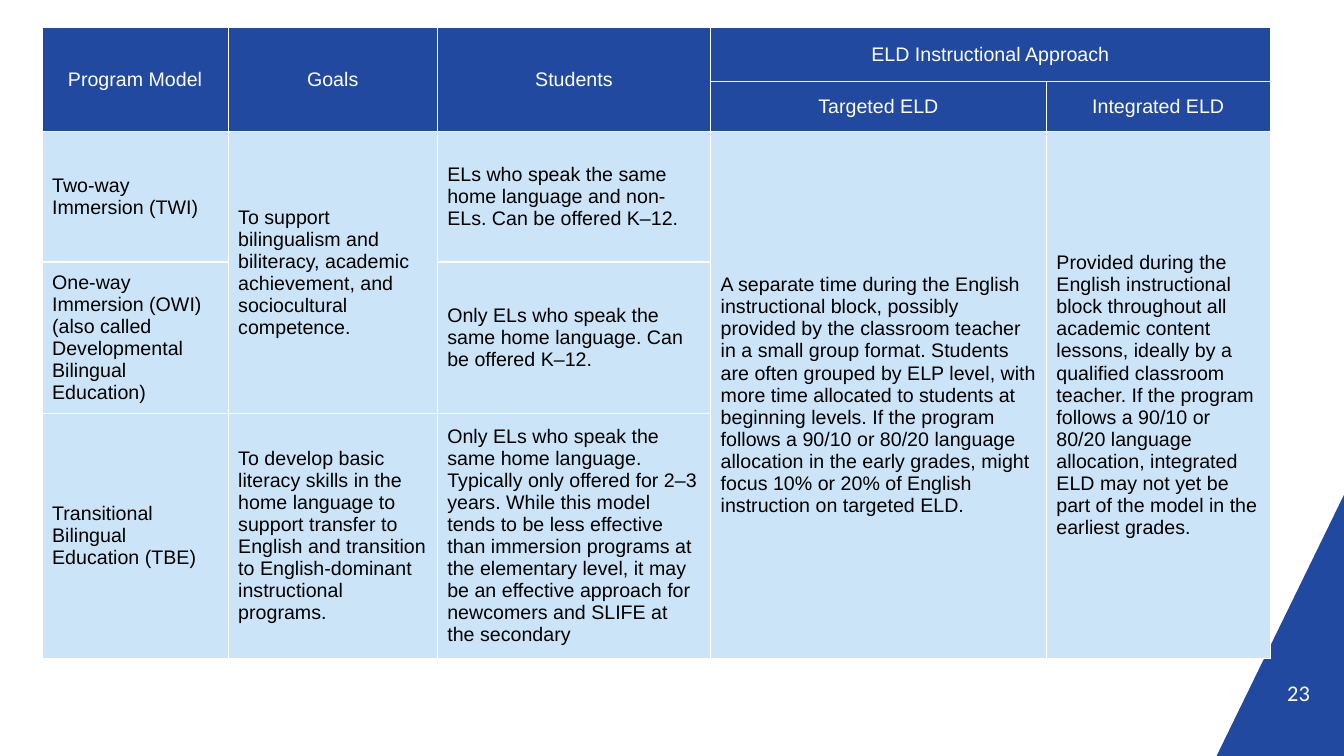
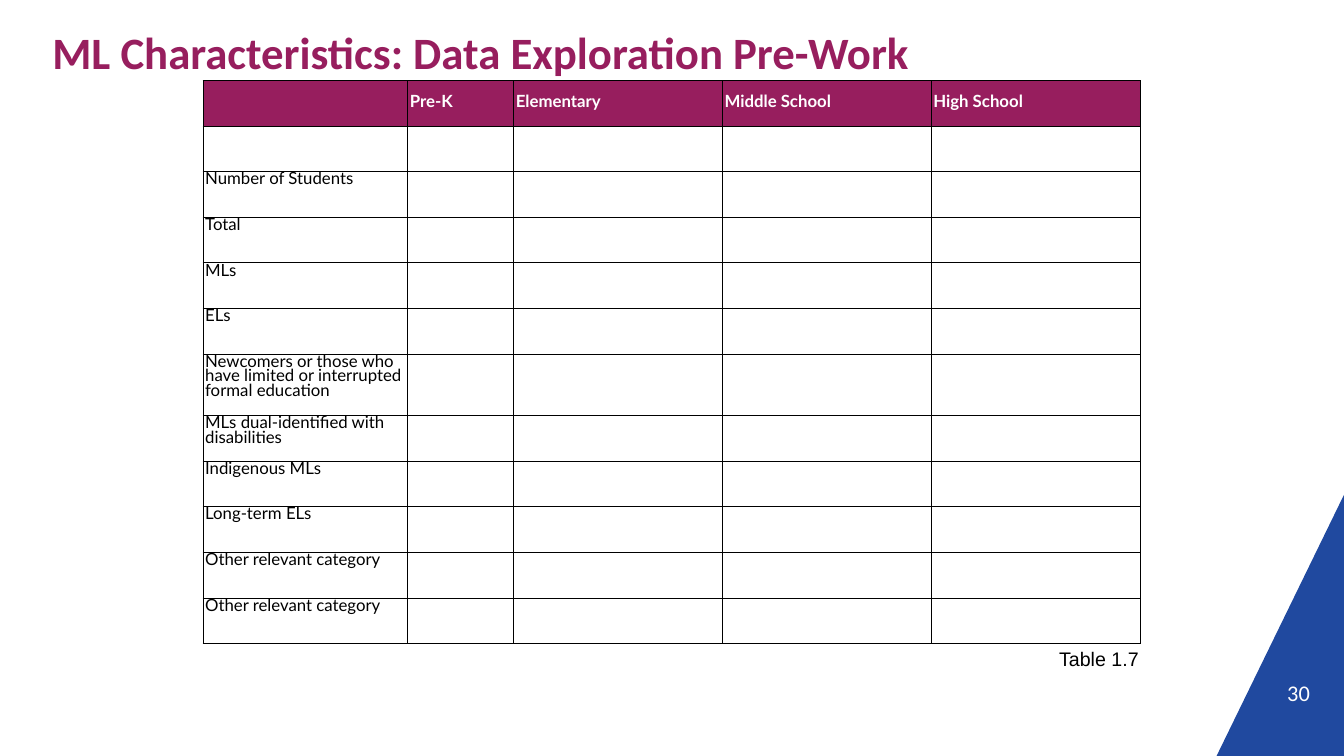
from lxml.etree import SubElement
from pptx import Presentation
from pptx.dml.color import RGBColor
from pptx.enum.text import MSO_ANCHOR as Anchor, PP_ALIGN as Align
from pptx.oxml.ns import qn
from pptx.util import Cm, Pt

BLUE = "20499F"
PALE_BLUE = "CCE4F7"
PLUM = "971E5E"
WHITE = "FFFFFF"
BLACK = "000000"


def rgb(value):
    return RGBColor.from_string(value)


def write(box, text, font="Arial", size=14, color=BLACK, bold=False, align=None,
          anchor=Anchor.TOP, margin=None, line=None, after=None):
    frame = getattr(box, "text_frame", box)
    box.vertical_anchor = anchor
    if margin is not None:
        box.margin_left = box.margin_right = Cm(margin)
        box.margin_top = box.margin_bottom = Cm(margin)
    frame.word_wrap = True
    frame.text = text
    for paragraph in frame.paragraphs:
        paragraph.alignment = align
        if line:
            paragraph.line_spacing = Pt(line)
        if after:
            paragraph.space_after = Pt(after)
        paragraph.font.name = font
        paragraph.font.size = Pt(size)
        paragraph.font.bold = bold
        paragraph.font.color.rgb = rgb(color)


deck = Presentation()
deck.slide_width = Cm(33.87)
deck.slide_height = Cm(19.05)
blank = deck.slide_layouts[6]
models_slide = deck.slides.add_slide(blank)
data_slide = deck.slides.add_slide(blank)

for slide, number in ((models_slide, "23"), (data_slide, "30")):
    outline = slide.shapes.build_freeform(Cm(33.87), Cm(12.47))
    outline.add_line_segments([(Cm(30.66), Cm(19.05)), (Cm(33.87), Cm(19.05))])
    corner = outline.convert_to_shape()
    corner.shadow.inherit = False
    corner.fill.solid()
    corner.fill.fore_color.rgb = rgb(BLUE)
    corner.line.fill.background()
    page = slide.shapes.add_textbox(Cm(30.5), Cm(17.02), Cm(2.51), Cm(0.76))
    write(page.text_frame, number, font="Calibri", size=16, color=WHITE,
          align=Align.RIGHT, anchor=Anchor.BOTTOM, margin=0)

model_rows = [
    ["Program Model", "Goals", "Students", "ELD Instructional Approach", None],
    [None, None, None, "Targeted ELD", "Integrated ELD"],
    [
        "Two-way Immersion (TWI)",
        "To support bilingualism and biliteracy, academic achievement, and "
        "sociocultural competence.",
        "ELs who speak the same home language and non-ELs. Can be offered K–12.",
        "A separate time during the English instructional block, possibly provided "
        "by the classroom teacher in a small group format. Students are often "
        "grouped by ELP level, with more time allocated to students at beginning "
        "levels. If the program follows a 90/10 or 80/20 language allocation in the "
        "early grades, might focus 10% or 20% of English instruction on targeted ELD.",
        "Provided during the English instructional block throughout all academic "
        "content lessons, ideally by a qualified classroom teacher. If the program "
        "follows a 90/10 or 80/20 language allocation, integrated ELD may not yet be "
        "part of the model in the earliest grades.",
    ],
    [
        "One-way Immersion (OWI)\n"
        "(also called Developmental Bilingual Education)",
        None,
        "Only ELs who speak the same home language. Can be offered K–12.",
        None,
        None,
    ],
    [
        "Transitional Bilingual Education (TBE)",
        "To develop basic literacy skills in the home language to support transfer "
        "to English and transition to English-dominant instructional programs.",
        "Only ELs who speak the same home language. Typically only offered for 2–3 "
        "years. While this model tends to be less effective than immersion programs "
        "at the elementary level, it may be an effective approach for newcomers and "
        "SLIFE at the secondary",
        None,
        None,
    ],
]
model_widths = [4.69, 5.27, 6.89, 8.46, 5.64]
model_heights = [1.36, 1.27, 3.28, 3.58, 5.82]
model_merges = [((0, 0), (1, 0)), ((0, 1), (1, 1)), ((0, 2), (1, 2)),
                ((0, 3), (0, 4)), ((2, 1), (3, 1)), ((2, 3), (4, 3)),
                ((2, 4), (4, 4))]

title = data_slide.shapes.add_textbox(Cm(1.32), Cm(0.61), Cm(30.43), Cm(1.37))
write(title.text_frame, "ML Characteristics: Data Exploration Pre-Work",
      font="Calibri", size=32, color=PLUM, bold=True, anchor=Anchor.MIDDLE, margin=0)

levels = [None, "Pre-K", "Elementary", "Middle School", "High School"]
categories = [
    None, "Number of Students", "Total", "MLs", "ELs",
    "Newcomers or those who have limited or interrupted formal education",
    "MLs dual-identified with disabilities", "Indigenous MLs", "Long-term ELs",
    "Other relevant category", "Other relevant category",
]
data_rows = [levels] + [[category] + [None] * 4 for category in categories]
data_widths = [5.16, 2.67, 5.26, 5.26, 5.26]
data_heights = [1.15] * 6 + [1.55] + [1.15] * 5

model_style = dict(anchor=Anchor.MIDDLE)
data_style = dict(font="Lato", size=12, margin=0.05, line=10.5, after=10.1)
tables = [
    (models_slide, 1.06, 0.69, model_rows, model_widths, model_heights, model_merges,
     2, BLUE, PALE_BLUE, WHITE, 1, model_style,
     dict(color=WHITE, align=Align.CENTER)),
    (data_slide, 5.12, 2.03, data_rows, data_widths, data_heights, [],
     1, PLUM, None, BLACK, 0.75, data_style,
     dict(color=WHITE, bold=True, anchor=Anchor.MIDDLE)),
]

for (slide, left, top, rows, widths, heights, merges, header_rows, header_fill,
     body_fill, border, border_width, style, header_style) in tables:
    table = slide.shapes.add_table(len(rows), len(widths), Cm(left), Cm(top),
                                   Cm(sum(widths)), Cm(sum(heights))).table
    table.horz_banding = False
    for column, width in zip(table.columns, widths):
        column.width = Cm(width)
    for row, height in zip(table.rows, heights):
        row.height = Cm(height)
    for first, last in merges:
        table.cell(*first).merge(table.cell(*last))
    for r, texts in enumerate(rows):
        is_header = r < header_rows
        fill = header_fill if is_header else body_fill
        for c, text in enumerate(texts):
            cell = table.cell(r, c)
            if text:
                write(cell, text, **{**style, **(header_style if is_header else {})})
            properties = cell._tc.get_or_add_tcPr()
            for side in ("a:lnL", "a:lnR", "a:lnT", "a:lnB"):
                edge = SubElement(properties, qn(side), w=str(Pt(border_width)))
                solid = SubElement(edge, qn("a:solidFill"))
                SubElement(solid, qn("a:srgbClr"), val=border)
            if fill:
                cell.fill.solid()
                cell.fill.fore_color.rgb = rgb(fill)
            else:
                cell.fill.background()

caption = data_slide.shapes.add_textbox(Cm(26.44), Cm(16.18), Cm(3.53), Cm(0.86))
write(caption.text_frame, "Table 1.7")

deck.save("out.pptx")
